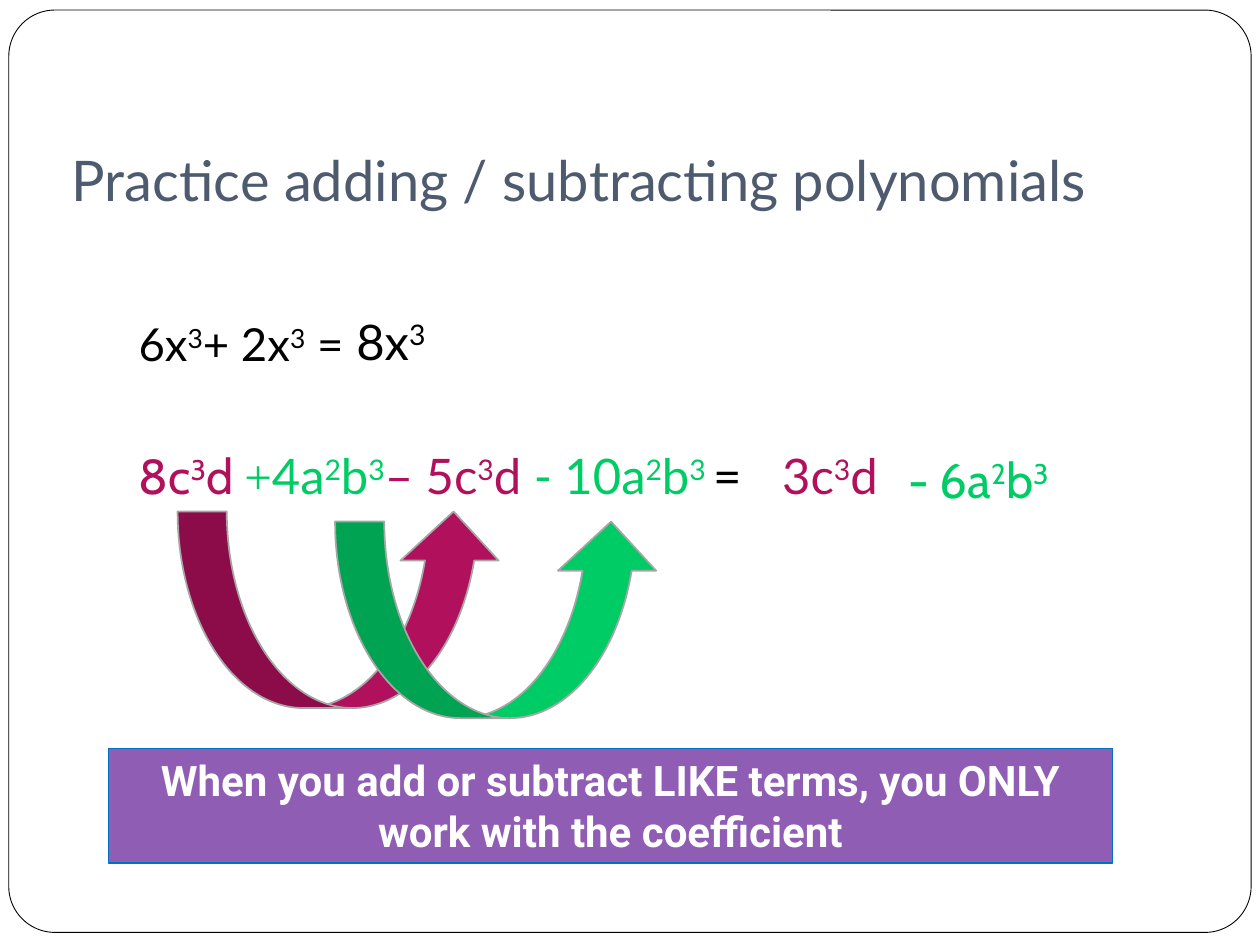
from dataclasses import dataclass

from lxml.etree import SubElement
from pptx import Presentation
from pptx.dml.color import RGBColor
from pptx.enum.shapes import MSO_SHAPE
from pptx.enum.text import MSO_ANCHOR, MSO_AUTO_SIZE, PP_ALIGN
from pptx.oxml.ns import qn
from pptx.util import Inches, Pt

COLUMNS, ROWS = 100, 75
CELL = Inches(0.1)


@dataclass(frozen=True)
class Theme:
    title: str = "4E5B6F"
    ink: str = "000000"
    paper: str = "FFFFFF"
    berry: str = "B0105C"
    green: str = "00CC66"
    arrow_line: str = "A6A6A6"
    rule: str = "7030A0"
    rule_line: str = "0070C0"
    main_font: str = "Lato"
    accent_font: str = "Cabin"
    sign_font: str = "Times New Roman"
    rule_font: str = "Roboto"
    title_size: int = 32
    term_size: int = 28
    first_size: int = 26
    rule_size: int = 24


THEME = Theme()


@dataclass(frozen=True)
class Box:
    """A rectangle measured in grid columns and rows."""
    column: float
    row: float
    columns: float
    rows: float

    def inner(self, column, row, columns, rows):
        return Box(self.column + column, self.row + row, columns, rows)

    def lengths(self):
        return [round(value * CELL) for value in
                (self.column, self.row, self.columns, self.rows)]

    def place(self, shape):
        shape.left, shape.top, shape.width, shape.height = self.lengths()


def color(value):
    return RGBColor.from_string(value)


def add_run(paragraph, text, size, ink, font=THEME.main_font, bold=False):
    run = paragraph.add_run()
    run.text = text
    run.font.size = Pt(size)
    run.font.name = font
    run.font.bold = bold
    run.font.color.rgb = color(ink)
    return run


def add_term(paragraph, term, size, ink, font=THEME.main_font):
    """Add a term whose exponents stand between carets."""
    for index, text in enumerate(term.split("^")):
        if text:
            run = add_run(paragraph, text, size, ink, font)
            if index % 2:
                run.font._element.set("baseline", "30000")


def add_panel(slide, box, kind, fill, line, width):
    shape = slide.shapes.add_shape(kind, *box.lengths())
    shape.shadow.inherit = False
    shape.fill.solid()
    shape.fill.fore_color.rgb = color(fill)
    shape.line.color.rgb = color(line)
    shape.line.width = Pt(width)
    return shape


def add_frame(slide, box):
    frame = add_panel(slide, box, MSO_SHAPE.ROUNDED_RECTANGLE,
                      THEME.paper, THEME.ink, 0.5)
    frame.adjustments[0] = 0.05
    # Behind the placeholders
    slide.shapes._spTree.insert(2, frame._element)


def add_title(slide, box):
    title = slide.shapes.title
    box.place(title)
    text_frame = title.text_frame
    text_frame.auto_size = MSO_AUTO_SIZE.NONE
    text_frame.vertical_anchor = MSO_ANCHOR.BOTTOM
    text_frame.margin_bottom = Inches(0.1)
    paragraph = text_frame.paragraphs[0]
    paragraph.alignment = PP_ALIGN.LEFT
    add_run(paragraph, "Practice adding / subtracting polynomials",
            THEME.title_size, THEME.title)


def add_problems(slide, box):
    body = slide.placeholders[1]
    box.place(body)
    text_frame = body.text_frame
    text_frame.auto_size = MSO_AUTO_SIZE.NONE
    size, main_font = THEME.term_size, THEME.main_font
    problems = [
        (5.8, [("6x^3^+ 2x^3^ =", THEME.first_size, THEME.ink, main_font)]),
        (42.8, [("8c^3^d ", size, THEME.berry, THEME.accent_font),
                ("+", size, THEME.green, THEME.sign_font),
                ("4a^2^b^3^", size, THEME.green, main_font),
                ("– 5c^3^d ", size, THEME.berry, main_font),
                ("- 10a^2^b^3 ^", size, THEME.green, main_font),
                ("=", size, THEME.ink, main_font)]),
    ]
    for index, (space, terms) in enumerate(problems):
        paragraph = text_frame.add_paragraph() if index else text_frame.paragraphs[0]
        paragraph.space_before = Pt(space)
        properties = paragraph._p.get_or_add_pPr()
        properties.set("marL", str(Inches(0.3)))
        properties.set("indent", str(-Inches(0.3)))
        SubElement(properties, qn("a:buNone"))
        for term in terms:
            add_term(paragraph, *term)


def add_answer(slide, box, term, ink, font):
    text_frame = slide.shapes.add_textbox(*box.lengths()).text_frame
    text_frame.word_wrap = True
    add_term(text_frame.paragraphs[0], term, THEME.term_size, ink, font)


def add_practice(slide, box):
    add_problems(slide, box.inner(0, 0.4, 51.7, 21.5))
    # Answers beside the problems
    add_answer(slide, box.inner(17.3, 0, 30.5, 5.7), "8x^3^",
               THEME.ink, THEME.main_font)
    add_answer(slide, box.inner(51.1, 10.7, 10.8, 5.7), "3c^3^d",
               THEME.berry, THEME.main_font)
    # Arrows joining like terms
    for index, fill in enumerate((THEME.berry, THEME.green)):
        arrow_box = box.inner(4.1 + 12.5 * index, 16.4 + 0.8 * index, 25.8, 15.6)
        add_panel(slide, arrow_box, MSO_SHAPE.CURVED_UP_ARROW,
                  fill, THEME.arrow_line, 1)
    add_answer(slide, box.inner(61.1, 11, 18, 5.7), "- 6a^2^b^3^",
               THEME.green, THEME.accent_font)


def add_rule(slide, box):
    panel = add_panel(slide, box, MSO_SHAPE.RECTANGLE,
                      THEME.rule, THEME.rule_line, 0.75)
    fill = panel._element.spPr.find(qn("a:solidFill"))
    SubElement(fill[0], qn("a:alpha")).set("val", "78000")
    text_frame = panel.text_frame
    text_frame.word_wrap = True
    text_frame.vertical_anchor = MSO_ANCHOR.TOP
    paragraph = text_frame.paragraphs[0]
    paragraph.alignment = PP_ALIGN.CENTER
    add_run(paragraph, "When you add or subtract LIKE terms, you ONLY "
            "work with the coefficient",
            THEME.rule_size, THEME.paper, THEME.rule_font, bold=True)


def main():
    presentation = Presentation()
    presentation.slide_width = COLUMNS * CELL
    presentation.slide_height = ROWS * CELL
    slide = presentation.slides.add_slide(presentation.slide_layouts[1])
    add_frame(slide, Box(0.7, 0.8, 98.6, 73.2))
    add_title(slide, Box(4.7, 6.2, 90, 11.7))
    add_practice(slide, Box(10, 24.2, 79.1, 32.8))
    add_rule(slide, Box(8.6, 59.4, 79.7, 9.1))
    presentation.save("out.pptx")


if __name__ == "__main__":
    main()
